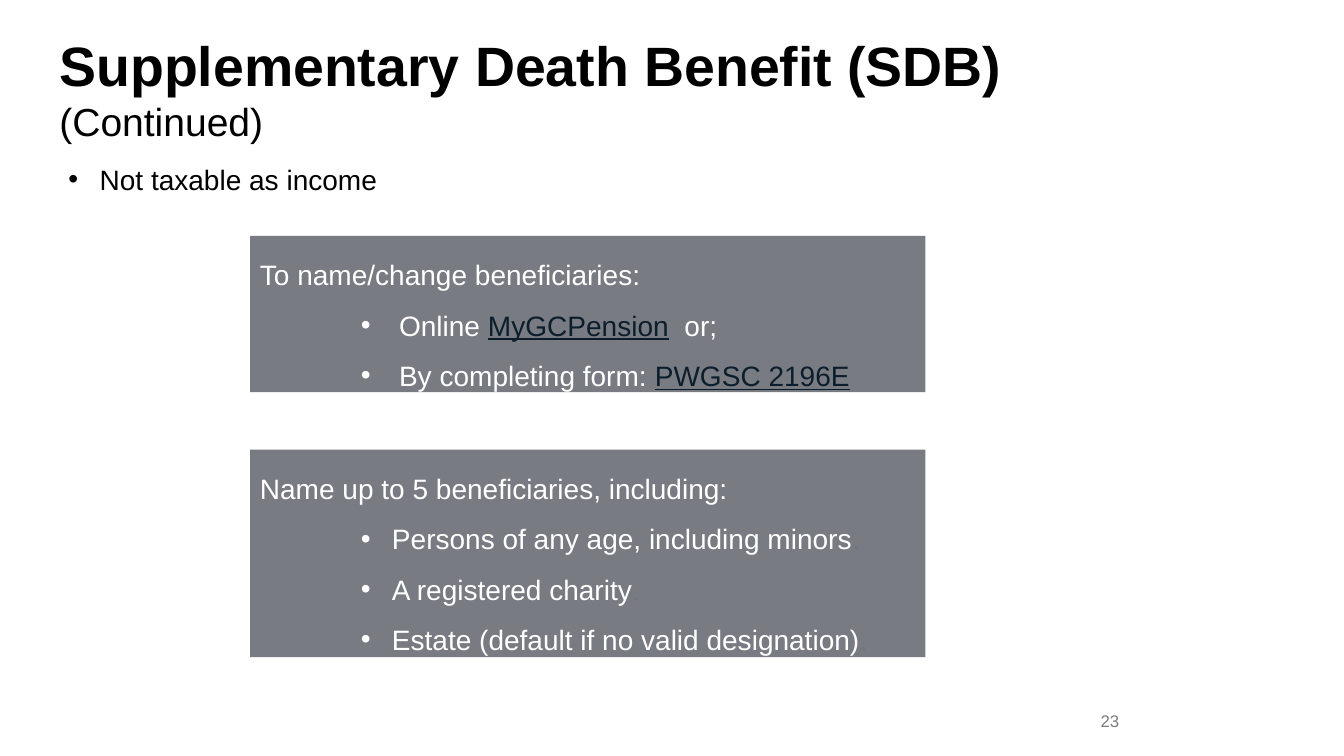
import pptx
import pptx.dml.color
import pptx.enum.shapes
import pptx.enum.text
import pptx.oxml.ns
import pptx.util
from lxml import etree

RGB = pptx.dml.color.RGBColor
BLACK = RGB(0x00, 0x00, 0x00)
WHITE = RGB(0xFF, 0xFF, 0xFF)
SLATE = RGB(0x4B, 0x4F, 0x59)
NAVY = RGB(0x0C, 0x1E, 0x2B)
FAINT = RGB(0x71, 0x75, 0x80)
GRAY = RGB(0x79, 0x7B, 0x7D)

FONT = "Arial"
SIZE = 20
ALIGN = pptx.enum.text.PP_ALIGN
ANCHOR = pptx.enum.text.MSO_ANCHOR
qn = pptx.oxml.ns.qn


def px(count):
    """Turn px, 100 to the inch, into EMU."""
    return pptx.util.Emu(count * 9144)


def write(para, text, color, size=SIZE, bold=False, line=False):
    run = para.add_run()
    run.text = text
    font = run.font
    font.name = FONT
    font.size = pptx.util.Pt(size)
    font.bold = bold
    font.underline = line
    font.color.rgb = color


def bullet(para, left, hang):
    props = para._p.get_or_add_pPr()
    props.set("marL", str(px(left)))
    props.set("indent", str(-px(hang)))
    etree.SubElement(props, qn("a:buFont")).set("typeface", FONT)
    etree.SubElement(props, qn("a:buChar")).set("char", "•")


def label(slide, box):
    """Add a wrapping text box and return its frame."""
    frame = slide.shapes.add_textbox(*map(px, box)).text_frame
    frame.word_wrap = True
    return frame


def title(slide, box):
    frame = label(slide, box)
    frame.margin_left = frame.margin_right = 0
    frame.margin_top = frame.margin_bottom = 0
    para = frame.paragraphs[0]
    para.line_spacing = 0.97
    write(para, "Supplementary Death Benefit (SDB)", BLACK, 39.6, bold=True)
    para.add_line_break()
    write(para, "(Continued)", BLACK, 27.9)


def point(slide, box):
    para = label(slide, box).paragraphs[0]
    bullet(para, 31, 31)
    write(para, "Not taxable as income", BLACK)


def panel(slide, box, head, items, hang):
    """Add a shaded box with a heading and bullets, each a list of runs."""
    shape = slide.shapes.add_shape(
        pptx.enum.shapes.MSO_SHAPE.RECTANGLE, *map(px, box))
    shape.shadow.inherit = False
    shape.line.fill.background()
    shape.fill.solid()
    shape.fill.fore_color.rgb = SLATE
    tint = shape._element.spPr.find(qn("a:solidFill"))[0]
    etree.SubElement(tint, qn("a:alpha")).set("val", "75000")

    frame = shape.text_frame
    frame.word_wrap = True
    frame.vertical_anchor = ANCHOR.TOP
    first = frame.paragraphs[0]
    write(first, head, WHITE)
    for runs in items:
        para = frame.add_paragraph()
        para.level = 1
        bullet(para, 100 + hang, hang)
        for text, color in runs:
            write(para, text, color, line=color == NAVY)
    for para in frame.paragraphs:
        para.alignment = ALIGN.LEFT
        para.line_spacing = 1.5


def number(slide, box):
    frame = label(slide, box)
    frame.vertical_anchor = ANCHOR.MIDDLE
    para = frame.paragraphs[0]
    para.alignment = ALIGN.RIGHT
    write(para, "23", GRAY, 12)


def main():
    deck = pptx.Presentation()
    deck.slide_width = px(1333)
    deck.slide_height = px(750)
    slide = deck.slides.add_slide(deck.slide_layouts[6])

    title(slide, (59, 35, 1037, 85))
    point(slide, (58, 156, 381, 44))
    panel(slide, (248, 234, 670, 155), "To name/change beneficiaries:", [
        [("Online ", WHITE), ("MyGCPension", NAVY), ("  or;", WHITE)],
        [("By completing form: ", WHITE), ("PWGSC 2196E", NAVY)],
    ], 38)
    people = ("Persons of any age, including minors",
              "A registered charity",
              "Estate (default if no valid designation)")
    panel(slide, (248, 446, 670, 206),
          "Name up to 5 beneficiaries, including:",
          [[(text, WHITE), (".", FAINT)] for text in people], 31)
    number(slide, (963, 695, 157, 40))

    deck.save("out.pptx")


if __name__ == "__main__":
    main()
